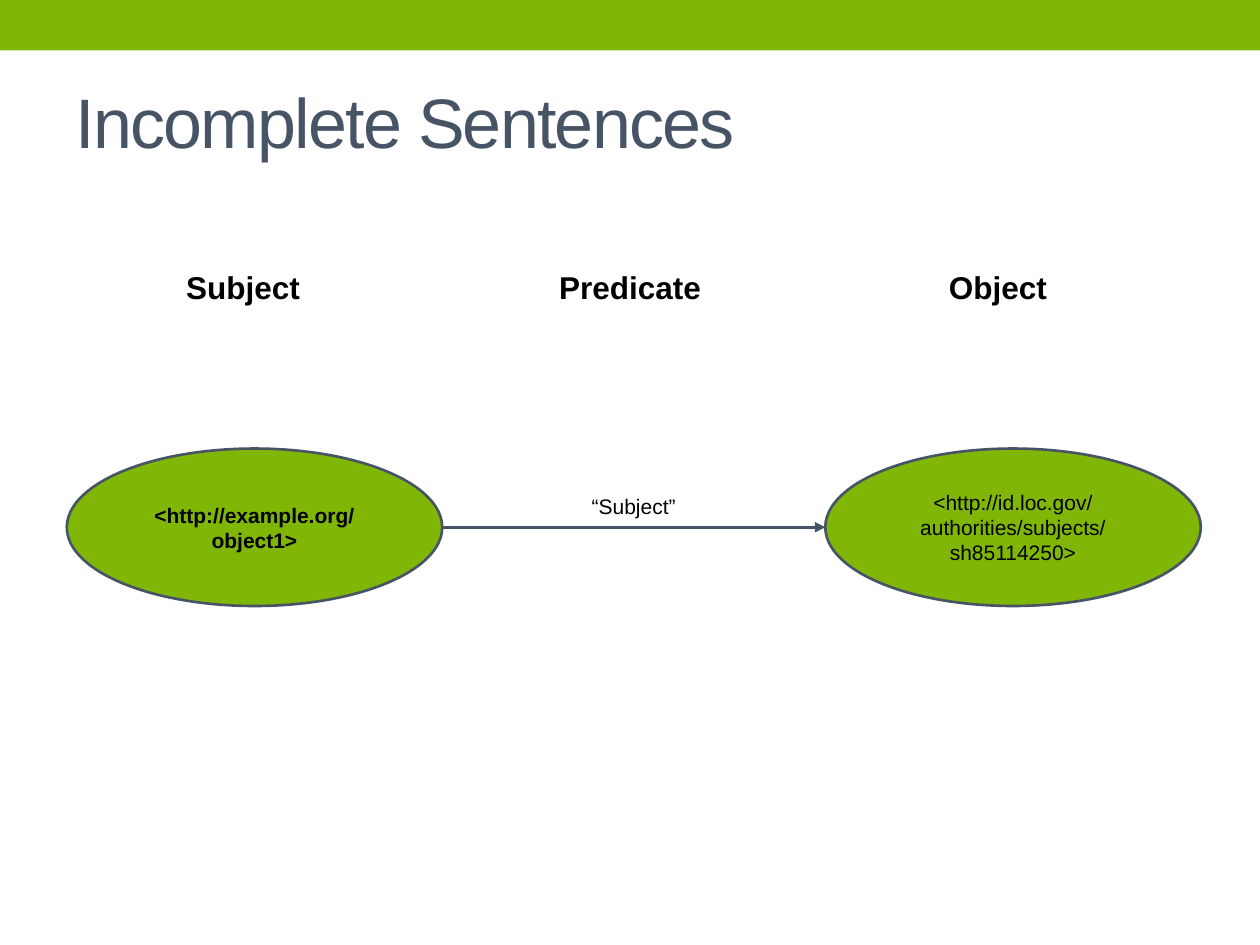
import pptx
import pptx.util
import pptx.dml.color
import pptx.enum.shapes
import pptx.enum.text
import pptx.oxml.ns
import lxml.etree

GREEN = pptx.dml.color.RGBColor(0x80, 0xB6, 0x06)
SLATE = pptx.dml.color.RGBColor(0x46, 0x54, 0x66)
BLACK = pptx.dml.color.RGBColor(0, 0, 0)
SHAPES = pptx.enum.shapes.MSO_SHAPE
ALIGN = pptx.enum.text.PP_ALIGN
ANCHOR = pptx.enum.text.MSO_ANCHOR
Inches = pptx.util.Inches


def write(shape, text, size=12, bold=False, color=BLACK, align=ALIGN.CENTER,
          anchor=ANCHOR.MIDDLE, inset=0.1, spacing=0):
    frame = shape.text_frame
    frame.word_wrap = True
    frame.auto_size = pptx.enum.text.MSO_AUTO_SIZE.NONE
    frame.vertical_anchor = anchor
    frame.margin_left = frame.margin_right = Inches(inset)
    frame.margin_top = frame.margin_bottom = Inches(inset)
    paragraph = frame.paragraphs[0]
    paragraph.alignment = align
    run = paragraph.add_run()
    run.text = text
    run.font.name = "Arial"
    run.font.size = pptx.util.Pt(size)
    run.font.bold = bold
    run.font.color.rgb = color
    if spacing:
        run.font._element.set("spc", str(spacing * 100))


presentation = pptx.Presentation()
presentation.slide_width = Inches(10)
presentation.slide_height = Inches(7.5)
slide = presentation.slides.add_slide(presentation.slide_layouts[5])
shapes = slide.shapes

band = shapes.add_shape(SHAPES.RECTANGLE, 0, 0, presentation.slide_width, Inches(0.4))
band.shadow.inherit = False
band.fill.solid()
band.fill.fore_color.rgb = GREEN
band.line.fill.background()

title = shapes.title
title.left, title.top = Inches(0.5), Inches(0.42)
title.width, title.height = Inches(9), Inches(1.08)
write(title, "Incomplete Sentences", size=40, color=SLATE, align=ALIGN.LEFT, spacing=-1)

for heading, left in (("Subject", 0.38), ("Predicate", 3.45), ("Object", 6.37)):
    box = shapes.add_textbox(Inches(left), Inches(2.03), Inches(3.1), Inches(0.81))
    write(box, heading, size=18, bold=True, anchor=ANCHOR.TOP)

node_top, node_width, node_height = 3.56, 2.98, 1.25
subject_left, object_left = 0.53, 6.55
for left, address, bold in (
    (subject_left, "<http://example.org/object1>", True),
    (object_left, "<http://id.loc.gov/authorities/subjects/sh85114250>", False),
):
    node = shapes.add_shape(SHAPES.OVAL, Inches(left), Inches(node_top),
                            Inches(node_width), Inches(node_height))
    node.shadow.inherit = False
    node.fill.solid()
    node.fill.fore_color.rgb = GREEN
    node.line.color.rgb = SLATE
    node.line.width = pptx.util.Pt(1.5)
    write(node, address, bold=bold)

arrow_left = Inches(subject_left + node_width)
arrow_right = Inches(object_left)
arrow_y = Inches(node_top + node_height / 2)
arrow = shapes.add_connector(pptx.enum.shapes.MSO_CONNECTOR.STRAIGHT,
                             arrow_left, arrow_y, arrow_right, arrow_y)
arrow.line.color.rgb = SLATE
arrow.line.width = pptx.util.Pt(1.5)
qn = pptx.oxml.ns.qn
lxml.etree.SubElement(arrow.line._get_or_add_ln(), qn("a:tailEnd"), type="triangle")
lxml.etree.SubElement(arrow._element.spPr, qn("a:effectLst"))

label = shapes.add_textbox(arrow_left, Inches(3.86), arrow_right - arrow_left, Inches(0.32))
write(label, "“Subject”")

presentation.save("out.pptx")
